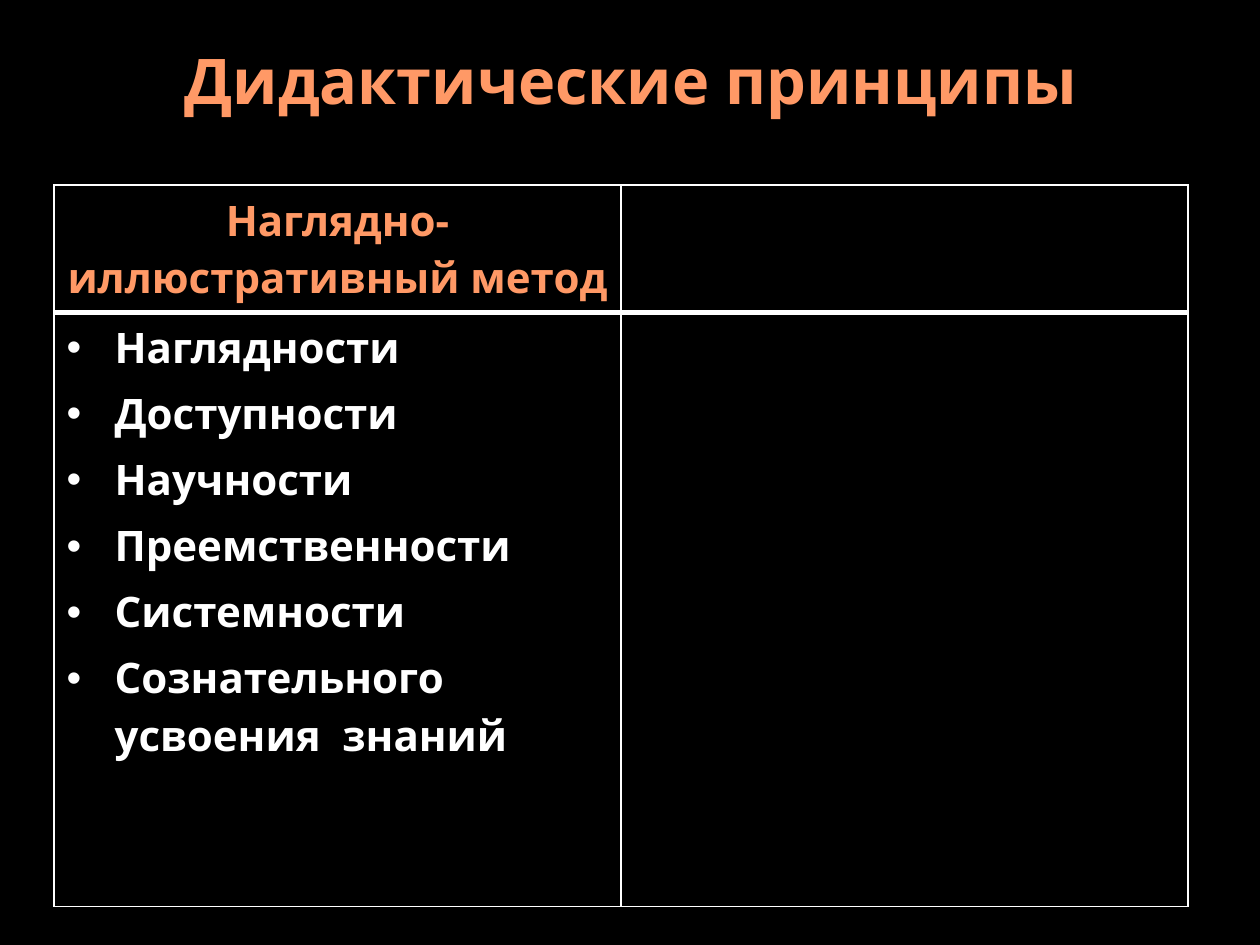
from lxml import etree
from pptx import Presentation
from pptx import util as u
from pptx.dml.color import RGBColor
from pptx.enum import text
from pptx.oxml import ns

SCALE = 914400 / 126
FONT = "Open Sans"
BLACK = RGBColor(0x00, 0x00, 0x00)
WHITE = RGBColor(0xFF, 0xFF, 0xFF)
ORANGE = RGBColor(0xFF, 0x99, 0x66)

METHOD = "Наглядно-иллюстративный метод"
PRINCIPLES = [
    "Наглядности",
    "Доступности",
    "Научности",
    "Преемственности",
    "Системности",
    "Сознательного усвоения  знаний",
]


def px(length):
    return u.Emu(round(length * SCALE))


def format_font(font, size, color):
    font.name = FONT
    font.size = u.Pt(size)
    font.bold = True
    font.color.rgb = color


def add_bullet(para, indent):
    props = para._p.get_or_add_pPr()
    props.set("marL", str(px(indent)))
    props.set("indent", str(-px(indent)))
    etree.SubElement(props, ns.qn("a:buFont"), typeface="Arial")
    etree.SubElement(props, ns.qn("a:buChar"), char="•")


def add_borders(cell, **widths):
    """Draw white borders; widths are points keyed by L, R, T and B."""
    props = cell._tc.get_or_add_tcPr()
    for side, width in widths.items():
        line = etree.SubElement(props, ns.qn(f"a:ln{side}"), w=str(u.Pt(width)))
        fill = etree.SubElement(line, ns.qn("a:solidFill"))
        etree.SubElement(fill, ns.qn("a:srgbClr"), val=str(WHITE))


def place_title(page, left, top, width, height):
    title = page.shapes.title
    title.left, title.top = px(left), px(top)
    title.width, title.height = px(width), px(height)
    frame = title.text_frame
    frame.text = "Дидактические принципы"
    frame.vertical_anchor = text.MSO_ANCHOR.MIDDLE
    para = frame.paragraphs[0]
    para.alignment = text.PP_ALIGN.CENTER
    format_font(para.runs[0].font, 36, ORANGE)


def place_table(page, left, top, width, height, header_height):
    table = page.shapes.add_table(
        2, 2, px(left), px(top), px(width), px(height)).table
    table.first_row = table.horz_banding = False
    for column in table.columns:
        column.width = px(width / 2)
    table.rows[0].height = px(header_height)
    table.rows[1].height = px(height - header_height)

    for cell in table.iter_cells():
        is_header = cell in (table.cell(0, 0), table.cell(0, 1))
        add_borders(cell, L=1, R=1, T=1 if is_header else 3, B=3 if is_header else 1)
        cell.fill.solid()
        cell.fill.fore_color.rgb = BLACK

    header = table.cell(0, 0).text_frame
    header.text = METHOD
    header.paragraphs[0].alignment = text.PP_ALIGN.CENTER
    format_font(header.paragraphs[0].runs[0].font, 24, ORANGE)

    body = table.cell(1, 0).text_frame
    body.text = "\n".join(PRINCIPLES)
    for index, para in enumerate(body.paragraphs):
        add_bullet(para, 48)
        if index:
            para.space_before = u.Pt(5)
        format_font(para.runs[0].font, 24, WHITE)


def main():
    deck = Presentation()
    deck.slide_width, deck.slide_height = px(1260), px(945)
    page = deck.slides.add_slide(deck.slide_layouts[5])
    page.background.fill.solid()
    page.background.fill.fore_color.rgb = BLACK
    place_title(page, 64, 17, 1134, 125)
    place_table(page, 54, 185, 1134, 721, header_height=127)
    deck.save("out.pptx")


if __name__ == "__main__":
    main()
